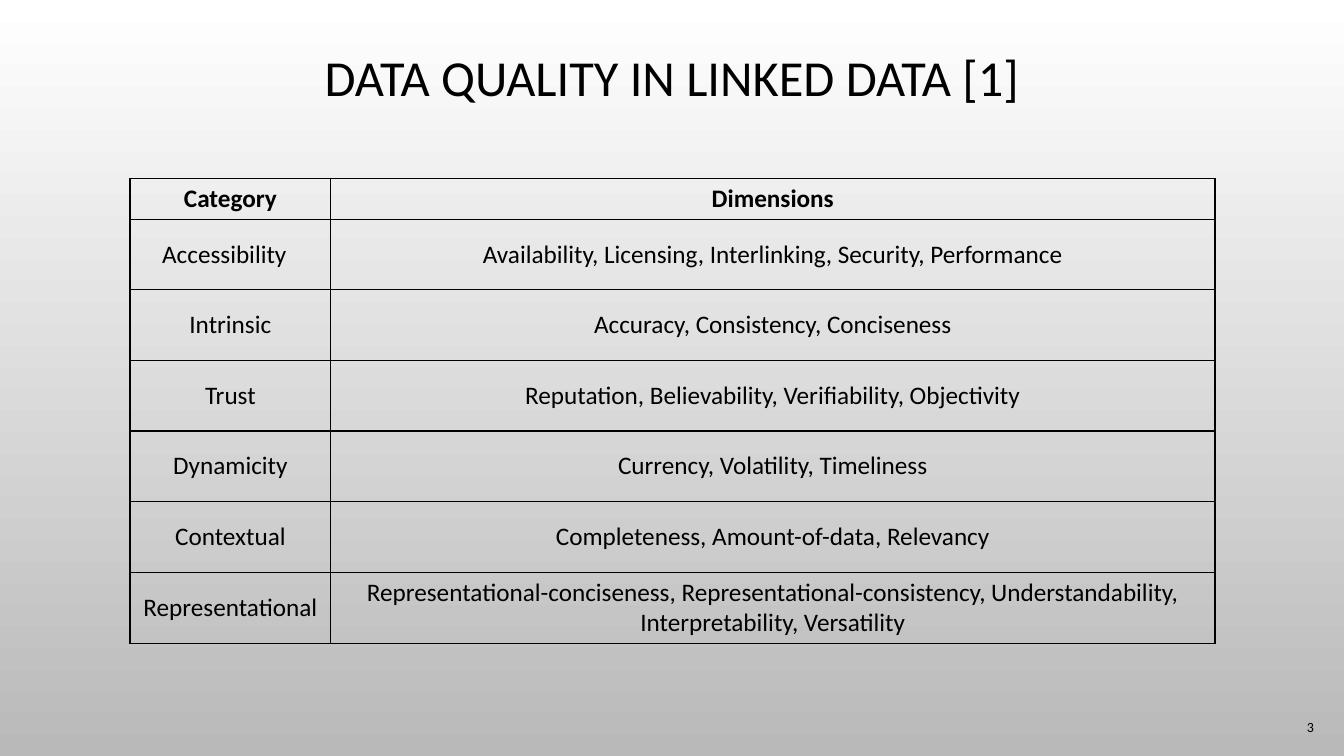
from lxml import etree
from pptx import Presentation
from pptx.dml.color import RGBColor
from pptx.enum.text import MSO_ANCHOR as Anchor, PP_ALIGN as Align
from pptx.oxml.ns import qn
from pptx.util import Inches, Pt

FONT = "Calibri"
COLORS = {"ink": "000000", "top": "FFFFFF", "bottom": "B9B9B9"}
COLUMN_WIDTHS = (1.99, 8.77)
HEADER_HEIGHT, ROW_HEIGHT = 0.4, 0.7
QUALITY_ROWS = [
    ("Category", "Dimensions"),
    ("Accessibility", "Availability, Licensing, Interlinking, Security, Performance"),
    ("Intrinsic", "Accuracy, Consistency, Conciseness"),
    ("Trust", "Reputation, Believability, Veriﬁability, Objectivity"),
    ("Dynamicity", "Currency, Volatility, Timeliness"),
    ("Contextual", "Completeness, Amount-of-data, Relevancy"),
    ("Representational",
     "Representational-conciseness, Representational-consistency, Understandability,\n"
     "Interpretability, Versatility"),
]


def color(name):
    """Return the named palette colour."""
    return RGBColor.from_string(COLORS[name])


def write_text(frame, text, size, align, bold=False):
    """Write each line of text as one paragraph with a formatted run."""
    frame.word_wrap = True
    for index, line in enumerate(text.split("\n")):
        paragraph = frame.add_paragraph() if index else frame.paragraphs[0]
        paragraph.alignment = align
        run = paragraph.add_run()
        run.text = line
        run.font.name = FONT
        run.font.size = Pt(size)
        run.font.bold = bold
        run.font.color.rgb = color("ink")


def place(shape, left, top, width, height):
    """Set the position and size of a shape in inches."""
    shape.left, shape.top = Inches(left), Inches(top)
    shape.width, shape.height = Inches(width), Inches(height)


def paint_background(slide):
    """Fill the slide with a gradient running from top to bottom."""
    fill = slide.background.fill
    fill.gradient()
    fill.gradient_angle = 270
    for stop, position, name in zip(fill.gradient_stops, (0, 1), ("top", "bottom")):
        stop.position = position
        stop.color.rgb = color(name)


def add_title(slide, text):
    """Place and format the title placeholder."""
    title = slide.shapes.title
    place(title, 1, 0.29, 11.33, 1.01)
    title.text_frame.vertical_anchor = Anchor.MIDDLE
    write_text(title.text_frame, text, 36, Align.CENTER)
    title.text_frame.paragraphs[0].line_spacing = 0.9


def outline_cell(cell):
    """Draw a thin line on all four sides of a cell and clear its fill."""
    properties = cell._tc.get_or_add_tcPr()
    for side in ("a:lnL", "a:lnR", "a:lnT", "a:lnB"):
        line = etree.SubElement(properties, qn(side), w=str(Pt(1)))
        solid = etree.SubElement(line, qn("a:solidFill"))
        etree.SubElement(solid, qn("a:srgbClr"), val=COLORS["ink"])
    cell.fill.background()


def add_quality_table(slide):
    """Add the table of quality categories and their dimensions."""
    heights = [HEADER_HEIGHT] + [ROW_HEIGHT] * (len(QUALITY_ROWS) - 1)
    table = slide.shapes.add_table(
        len(QUALITY_ROWS), len(COLUMN_WIDTHS), Inches(1.29), Inches(1.77),
        Inches(sum(COLUMN_WIDTHS)), Inches(sum(heights))).table
    table.first_row = table.horz_banding = False
    for column, width in zip(table.columns, COLUMN_WIDTHS):
        column.width = Inches(width)
    for row_index, (row, height) in enumerate(zip(table.rows, heights)):
        row.height = Inches(height)
        for cell, text in zip(row.cells, QUALITY_ROWS[row_index]):
            cell.vertical_anchor = Anchor.MIDDLE
            write_text(cell.text_frame, text, 18, Align.CENTER, bold=row_index == 0)
            outline_cell(cell)
    table.cell(1, 0).margin_right = Inches(0.22)


def add_page_number(slide, number):
    """Add the page number at the lower right."""
    box = slide.shapes.add_textbox(Inches(12.29), Inches(7.01), Inches(0.84), Inches(0.4))
    box.text_frame.vertical_anchor = Anchor.MIDDLE
    write_text(box.text_frame, number, 10, Align.RIGHT)


def main():
    """Build and save the slide."""
    presentation = Presentation()
    presentation.slide_width = Inches(13.33)
    presentation.slide_height = Inches(7.5)
    slide = presentation.slides.add_slide(presentation.slide_layouts[5])
    paint_background(slide)
    add_title(slide, "DATA QUALITY IN LINKED DATA [1]")
    add_quality_table(slide)
    add_page_number(slide, "3")
    presentation.save("out.pptx")


if __name__ == "__main__":
    main()
